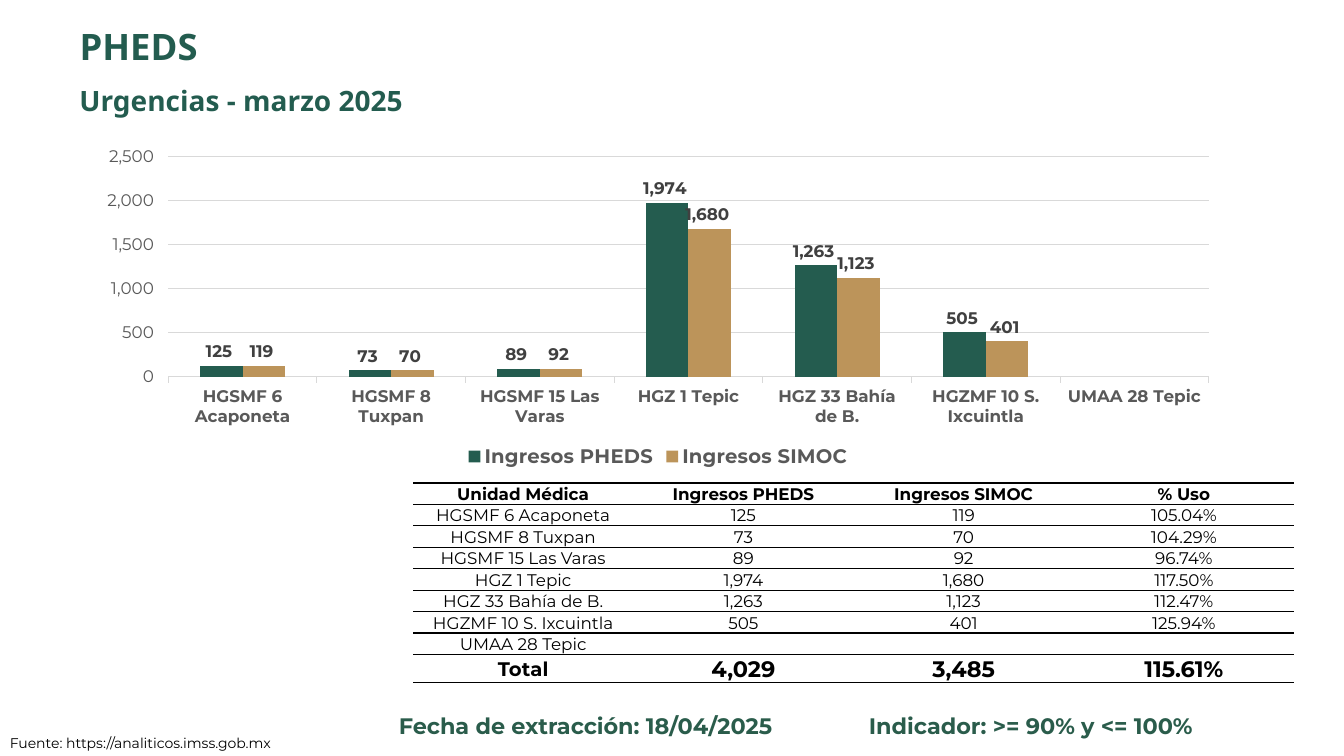
from lxml import etree
from pptx import Presentation
from pptx.chart.data import CategoryChartData
from pptx.dml.color import RGBColor
from pptx.enum.chart import XL_CHART_TYPE, XL_LABEL_POSITION, XL_LEGEND_POSITION, XL_TICK_MARK
from pptx.enum.text import MSO_ANCHOR, MSO_AUTO_SIZE, PP_ALIGN
from pptx.oxml import parse_xml
from pptx.oxml.ns import nsdecls, qn
from pptx.util import Cm, Pt

COLUMNS = XL_CHART_TYPE.COLUMN_CLUSTERED
OUTSIDE_END = XL_LABEL_POSITION.OUTSIDE_END
BOTTOM = XL_LEGEND_POSITION.BOTTOM
TICK_OUT = XL_TICK_MARK.OUTSIDE
LEFT, CENTER = PP_ALIGN.LEFT, PP_ALIGN.CENTER
TOP, MIDDLE = MSO_ANCHOR.TOP, MSO_ANCHOR.MIDDLE

COLORS = {
    "title": "235C4F", "note": "2A5C4B", "text": "000000",
    "pheds": "245C4F", "simoc": "BC945A",
    "axis": "595959", "label": "404040", "grid": "D9D9D9",
}
HEAD_FONT, BODY_FONT = "Noto Sans", "Montserrat"
NUMBER_FORMAT = r"#,##0_);\(#,##0\)"

SERIES = [("Ingresos PHEDS", "pheds"), ("Ingresos SIMOC", "simoc")]
UNITS = [
    ("HGSMF 6 Acaponeta", 125, 119),
    ("HGSMF 8 Tuxpan", 73, 70),
    ("HGSMF 15 Las Varas", 89, 92),
    ("HGZ 1 Tepic", 1974, 1680),
    ("HGZ 33 Bahía de B.", 1263, 1123),
    ("HGZMF 10 S. Ixcuintla", 505, 401),
    ("UMAA 28 Tepic", None, None),
]


def rgb(name):
    return RGBColor.from_string(COLORS[name])


def format_font(font, size, color, bold=False, name=BODY_FONT):
    for attr, value in {"size": Pt(size), "bold": bold, "name": name}.items():
        setattr(font, attr, value)
    font.color.rgb = rgb(color)


def place(sp, box):
    for attr, value in zip(("left", "top", "width", "height"), box):
        setattr(sp, attr, Cm(value))


def write(tf, text, align, **style):
    p = tf.paragraphs[0]
    p.alignment = align
    r = p.add_run()
    r.text = text
    format_font(r.font, **style)
    return p


def add_text(s, box, text, align=LEFT, wrap=True, **style):
    sp = s.shapes.add_textbox(*map(Cm, box))
    sp.text_frame.word_wrap = wrap
    return write(sp.text_frame, text, align, **style)


def add_header(s, box):
    left, top, width, height = box
    line = height * 0.46
    style = {"color": "title", "bold": True, "name": HEAD_FONT}
    title = s.shapes.title
    place(title, (left, top, width, line))
    tf = title.text_frame
    tf.auto_size = MSO_AUTO_SIZE.NONE
    tf.vertical_anchor = MIDDLE
    p = write(tf, "PHEDS", LEFT, size=26, **style)
    p.line_spacing = 0.9
    p = add_text(s, (left, top + height - line, width, line),
                 "Urgencias - marzo 2025", size=20, **style)
    p.line_spacing = 0.9


def add_admissions_chart(s, box):
    data = CategoryChartData()
    data.categories = [unit[0] for unit in UNITS]
    for i, (name, _) in enumerate(SERIES, 1):
        data.add_series(name, [unit[i] for unit in UNITS])
    chart = s.shapes.add_chart(COLUMNS, *map(Cm, box), data).chart
    format_font(chart.font, 10, "text")
    chart.has_title = False
    chart.has_legend = True
    chart.legend.position = BOTTOM
    chart.legend.include_in_layout = False
    format_font(chart.legend.font, 14, "axis", bold=True)

    plot = chart.plots[0]
    plot.vary_by_categories = False
    plot.gap_width, plot.overlap = 150, 0
    for series, (_, color) in zip(plot.series, SERIES):
        series.format.fill.solid()
        series.format.fill.fore_color.rgb = rgb(color)
        labels = series.data_labels
        for attr, value in {"show_value": True, "position": OUTSIDE_END,
                            "number_format": NUMBER_FORMAT,
                            "number_format_is_linked": False}.items():
            setattr(labels, attr, value)
        format_font(labels.font, 12, "label", bold=True)

    cat, val = chart.category_axis, chart.value_axis
    for axis, bold in ((cat, True), (val, False)):
        axis.major_tick_mark = TICK_OUT
        format_font(axis.tick_labels.font, 12, "axis", bold)
    val.minimum_scale, val.maximum_scale, val.major_unit = 0, 2500, 500
    val.tick_labels.number_format = NUMBER_FORMAT
    val.tick_labels.number_format_is_linked = False
    val.format.line.fill.background()
    for line in (cat.format.line, val.major_gridlines.format.line):
        line.width = Pt(0.75)
        line.color.rgb = rgb("grid")


def rule_cell(cell):
    """Draw black rules above and below the cell and none at its sides."""
    cell.fill.background()
    tc_pr = cell._tc.get_or_add_tcPr()
    solid = f'<a:solidFill><a:srgbClr val="{COLORS["text"]}"/></a:solidFill>'
    for i, side in enumerate("LRTB"):
        paint = solid if side in "TB" else "<a:noFill/>"
        tc_pr.insert(i, parse_xml(
            f'<a:ln{side} {nsdecls("a")} w="{Pt(1)}">{paint}</a:ln{side}>'))


def usage_row(name, pheds, simoc):
    if pheds is None:
        return name, "", "", ""
    return name, f"{pheds:,}", f"{simoc:,}", f"{pheds / simoc:.2%}"


def add_usage_table(s, box):
    totals = [sum(unit[i] or 0 for unit in UNITS) for i in (1, 2)]
    rows = [("Unidad Médica", *(name for name, _ in SERIES), "% Uso"),
            *(usage_row(*unit) for unit in UNITS),
            usage_row("Total", *totals)]
    last = len(rows) - 1
    table = s.shapes.add_table(len(rows), len(rows[0]), *map(Cm, box)).table
    table.first_row = table.horz_banding = False
    for column in table.columns:
        column.width = Cm(box[2] / len(rows[0]))
    for i, row in enumerate(rows):
        table.rows[i].height = Cm(0.71 if i == last else 0.54)
        for j, text in enumerate(row):
            cell = table.cell(i, j)
            rule_cell(cell)
            for side in ("left", "right", "top"):
                setattr(cell, f"margin_{side}", Cm(0.03))
            cell.margin_bottom = 0
            cell.vertical_anchor = TOP if j == 0 and 0 < i < last else MIDDLE
            size = 12 if i < last else 14 if j == 0 else 16
            if text:
                write(cell.text_frame, text, CENTER, size=size, color="text",
                      bold=i in (0, last))
            else:
                p = cell.text_frame.paragraphs[0]
                etree.SubElement(p._p, qn("a:endParaRPr"), sz=str(size * 100))


def add_notes_line(s, box):
    left, top, width, height = box
    style = {"align": CENTER, "size": 16, "color": "note", "bold": True}
    add_text(s, (left, top, 12.8, height), "Fecha de extracción: 18/04/2025", **style)
    add_text(s, (left + width - 14.68, top, 14.68, height),
             "Indicador: >= 90% y <= 100%", **style)


def main():
    prs = Presentation()
    prs.slide_width, prs.slide_height = Cm(33.87), Cm(19.05)
    s = prs.slides.add_slide(prs.slide_layouts.get_by_name("Title Only"))
    add_header(s, (1.75, 0.61, 24.08, 2.71))
    add_text(s, (0, 18.39, 7.42, 0.69), "Fuente: https://analiticos.imss.gob.mx",
             wrap=False, size=10, color="text")
    add_usage_table(s, (10.41, 12.17, 22.2, 5.03))
    add_admissions_chart(s, (2.13, 3.53, 28.91, 8.38))
    add_notes_line(s, (8.36, 17.81, 24.96, 0.94))
    prs.save("out.pptx")


if __name__ == "__main__":
    main()
